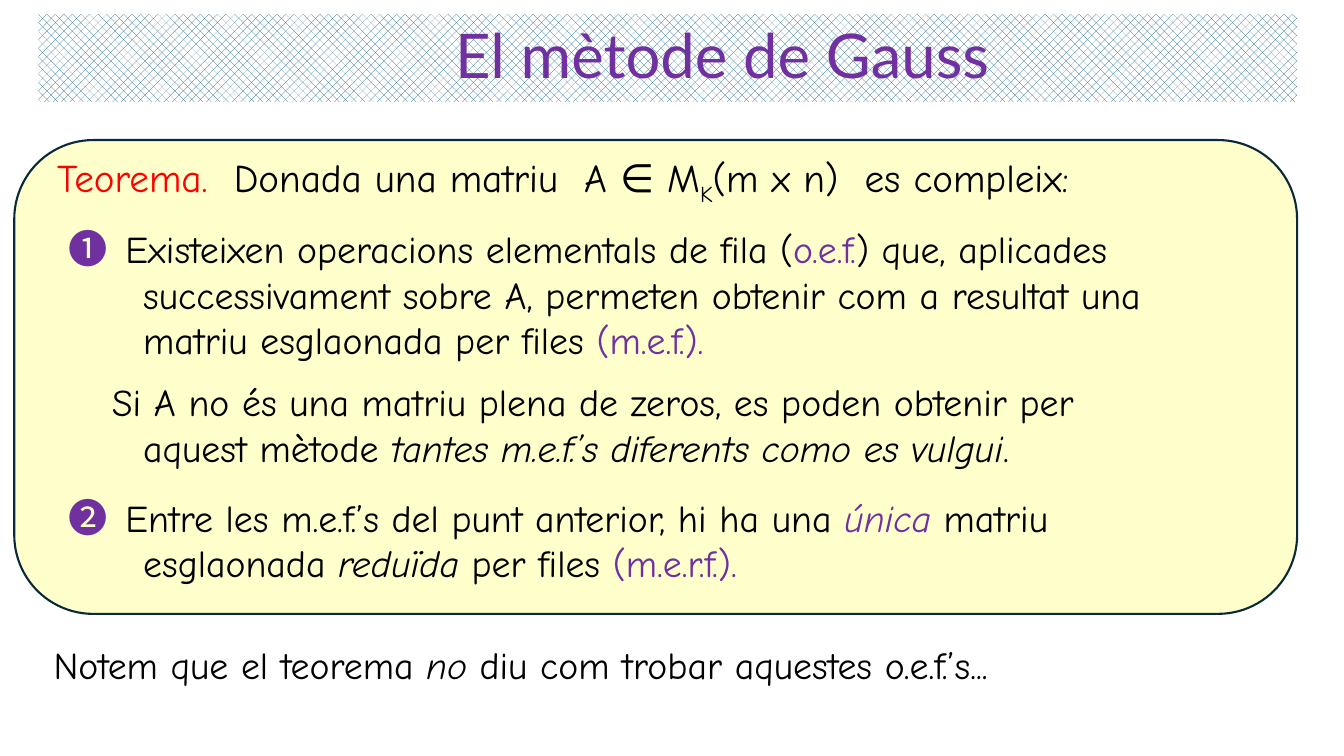
from dataclasses import dataclass

from pptx import Presentation
from pptx import util as u
from pptx.dml.color import RGBColor
from pptx.enum import dml, shapes, text


@dataclass(frozen=True)
class Theme:
    violet: str = "7030A0"
    red: str = "FF0000"
    ink: str = "000000"
    cream: str = "FFFFCC"
    outline: str = "092A39"
    weave: str = "156082"
    paper: str = "FFFFFF"
    body_font: str = "Comic Neue"
    title_font: str = "Lato"
    marker_font: str = "Noto Sans CJK JP"
    title_size: int = 44
    lead_size: int = 28
    body_size: float = 27


THEME = Theme()
PLAIN = {"name": THEME.body_font, "size": THEME.body_size, "color": THEME.ink}
ITALIC = PLAIN | {"italic": True}
KEY = PLAIN | {"color": THEME.violet}
KEY_ITALIC = KEY | {"italic": True}
LEAD = PLAIN | {"size": THEME.lead_size}
LABEL = LEAD | {"color": THEME.red}
SUBSCRIPT = LEAD | {"baseline": -25000}
MARKER = KEY | {"name": THEME.marker_font, "size": THEME.lead_size}
TITLE = KEY | {"name": THEME.title_font, "size": THEME.title_size}

HANG = 1.88
LEAD_LINE = [("Teorema.  ", LABEL), ("Donada una matriu  A ∈ M", LEAD), ("K", SUBSCRIPT),
             ("(m x n)  es compleix", LEAD), (":", PLAIN)]
# Offset from the card's top, start of the first line, spans ("\n" breaks a line)
STATEMENTS = [
    (2.13, 0, [("➊  ", MARKER), ("Existeixen operacions elementals de fila (", PLAIN),
               ("o.e.f.", KEY),
               (") que, aplicades\nsuccessivament sobre A, permeten obtenir com a resultat una"
                "\nmatriu esglaonada per files ", PLAIN), ("(m.e.f.).", KEY)]),
    (6.02, 1.09, [("Si A no és una matriu plena de zeros, es poden obtenir per"
                   "\naquest mètode ", PLAIN),
                  ("tantes m.e.f.’s diferents como es vulgui", ITALIC), (".", PLAIN)]),
    (8.89, 0, [("➋  ", MARKER), ("Entre les m.e.f.’s del punt anterior, hi ha una ", PLAIN),
               ("única ", KEY_ITALIC), ("matriu\nesglaonada ", PLAIN), ("reduïda", ITALIC),
               (" per files ", PLAIN), ("(m.e.r.f.).", KEY)]),
]
REMARK = [("Notem que el teorema ", PLAIN), ("no ", ITALIC),
          ("diu com trobar aquestes o.e.f.’s...", PLAIN)]


def lengths(box):
    return [u.Cm(value) for value in box]


def write(para, spans):
    """Fill a paragraph with styled spans."""
    for words, style in spans:
        for number, line in enumerate(words.split("\n")):
            if number:
                para.add_line_break()
            span = para.add_run()
            span.text = line
            for key, value in style.items():
                if key == "color":
                    span.font.color.rgb = RGBColor.from_string(value)
                elif key == "baseline":
                    span.font._element.set("baseline", str(value))
                else:
                    setattr(span.font, key, u.Pt(value) if key == "size" else value)


def add_text(page, box, spans, hang=0, first=0, spacing=1.0):
    """Place a text whose first line starts at first and the others at hang."""
    frame = page.shapes.add_textbox(*lengths(box)).text_frame
    settings = {"word_wrap": True, "margin_left": 0, "margin_right": 0,
                "margin_top": 0, "margin_bottom": 0}
    for key, value in settings.items():
        setattr(frame, key, value)
    para = frame.paragraphs[0]
    para.line_spacing = spacing
    properties = para._p.get_or_add_pPr()
    properties.set("marL", str(u.Cm(hang)))
    properties.set("indent", str(u.Cm(first - hang)))
    write(para, spans)


def add_title_band(page, box):
    band = page.shapes.add_shape(shapes.MSO_SHAPE.RECTANGLE, *lengths(box))
    band.shadow.inherit = False
    band.line.fill.background()
    band.fill.patterned()
    band.fill.pattern = dml.MSO_PATTERN.WEAVE
    band.fill.fore_color.rgb = RGBColor.from_string(THEME.weave)
    band.fill.back_color.rgb = RGBColor.from_string(THEME.paper)
    frame = band.text_frame
    frame.margin_left = u.Cm(3)
    frame.vertical_anchor = text.MSO_ANCHOR.MIDDLE
    para = frame.paragraphs[0]
    para.alignment = text.PP_ALIGN.CENTER
    para.line_spacing = 0.9
    write(para, [("El mètode de Gauss", TITLE)])


def add_theorem_card(page, box):
    left, top, width, height = box
    card = page.shapes.add_shape(shapes.MSO_SHAPE.ROUNDED_RECTANGLE, *lengths(box))
    card.shadow.inherit = False
    card.fill.solid()
    card.fill.fore_color.rgb = RGBColor.from_string(THEME.cream)
    card.line.color.rgb = RGBColor.from_string(THEME.outline)
    card.line.width = u.Pt(1.5)
    add_text(page, (left + 1.08, top + 0.36, width - 2, 1.4), LEAD_LINE, spacing=0.9)
    for offset, first, spans in STATEMENTS:
        line_count = 1 + sum(words.count("\n") for words, _ in spans)
        add_text(page, (left + 1.37, top + offset, width - 2.5, 1.16 * line_count),
                 spans, HANG, first)


def main():
    deck = Presentation()
    deck.slide_width, deck.slide_height = u.Cm(33.87), u.Cm(19.05)
    page = deck.slides.add_slide(deck.slide_layouts[6])
    add_title_band(page, (0.97, 0.36, 31.72, 2.21))
    add_theorem_card(page, (0.36, 3.53, 32.33, 11.94))
    add_text(page, (1.35, 16.18, 30.5, 1.2), REMARK)
    deck.save("out.pptx")


if __name__ == "__main__":
    main()
